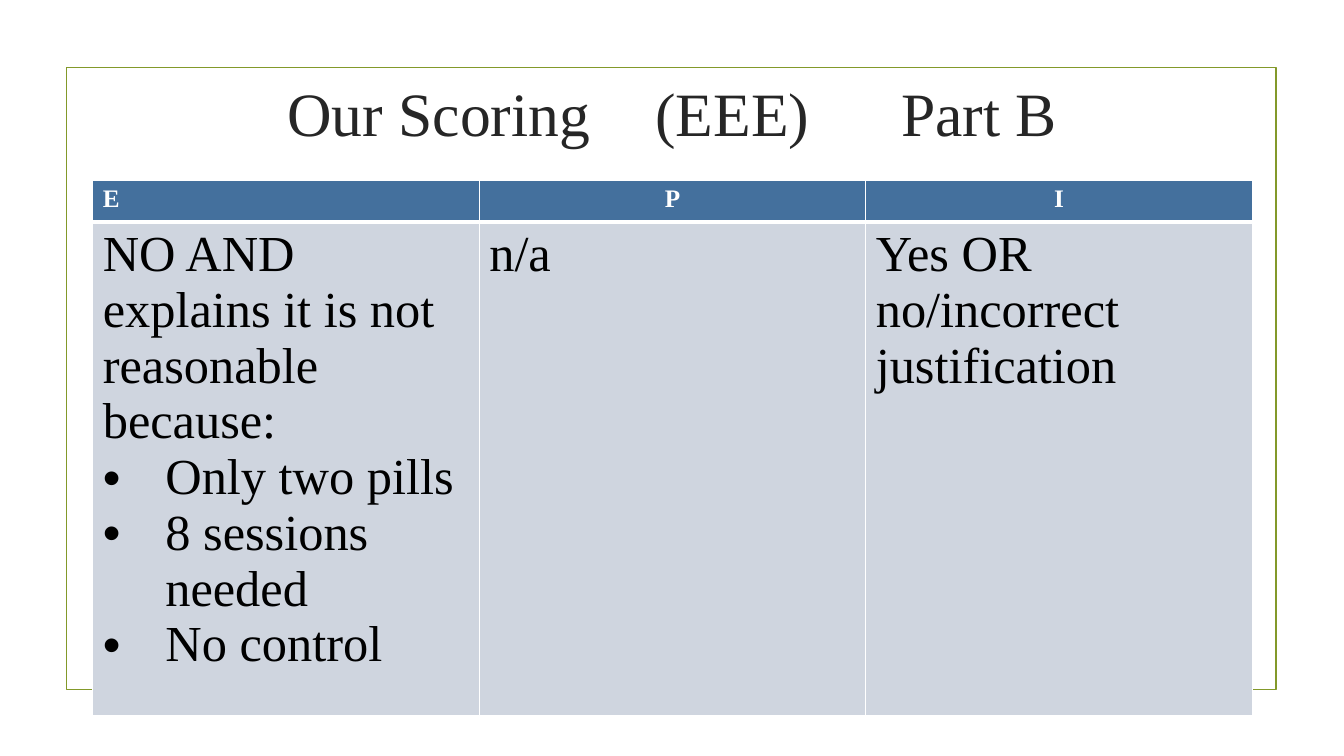
from dataclasses import dataclass

from lxml.etree import SubElement
from pptx import Presentation
from pptx.dml.color import RGBColor
from pptx.enum.shapes import MSO_SHAPE
from pptx.enum.text import MSO_ANCHOR, PP_ALIGN
from pptx.oxml.ns import qn
from pptx.util import Inches, Pt


@dataclass(frozen=True)
class Theme:
    """Colours, font and type sizes of the slide."""
    font: str = "Times New Roman"
    title: int = 44
    head: int = 18
    body: int = 36
    ink: str = "262626"
    black: str = "000000"
    white: str = "FFFFFF"
    olive: str = "83992A"
    blue: str = "44709D"
    pale: str = "CFD5DF"


THEME = Theme()
HEADS = ("E", "P", "I")
CELLS = (
    ("NO AND explains it is not reasonable because:",
     "•Only two pills", "•8 sessions needed", "•No control"),
    ("n/a",),
    ("Yes OR no/incorrect justification",),
)


def write(frame, lines, size, color, bold=False, align=PP_ALIGN.LEFT, tabs=()):
    """Fill a text frame; a line that starts with • becomes a bullet."""
    frame.word_wrap = True
    for i, line in enumerate(lines):
        para = frame.add_paragraph() if i else frame.paragraphs[0]
        para.alignment = align
        props = para._p.get_or_add_pPr()
        if line.startswith("•"):
            indent = Inches(0.62)
            props.set("marL", str(indent))
            props.set("indent", str(-indent))
            SubElement(props, qn("a:buFont"), typeface="Arial")
            SubElement(props, qn("a:buChar"), char="•")
        if tabs:
            stops = SubElement(props, qn("a:tabLst"))
            for stop in tabs:
                SubElement(stops, qn("a:tab"), pos=str(Inches(stop)), algn="l")
        run = para.add_run()
        run.text = line.lstrip("•")
        font = run.font
        font.name, font.size, font.bold = THEME.font, Pt(size), bold
        font.color.rgb = RGBColor.from_string(color)


def edge(cell, **widths):
    """Draw white cell borders, with widths in points by side."""
    props = cell._tc.get_or_add_tcPr()
    for side in "LRTB":
        line = SubElement(props, qn(f"a:ln{side}"), w=str(Pt(widths.get(side, 1))))
        fill = SubElement(line, qn("a:solidFill"))
        SubElement(fill, qn("a:srgbClr"), val=THEME.white)


def border(slide, box):
    """Draw the outline around the content."""
    shape = slide.shapes.add_shape(MSO_SHAPE.RECTANGLE, *map(Inches, box))
    shape.shadow.inherit = False
    shape.fill.background()
    shape.line.color.rgb = RGBColor.from_string(THEME.olive)
    shape.line.width = Pt(1.25)


def title(slide, box):
    """Place the title, its three parts set on tab stops."""
    frame = slide.shapes.add_textbox(*map(Inches, box)).text_frame
    frame.vertical_anchor = MSO_ANCHOR.MIDDLE
    frame.margin_left = Inches(1.43)
    write(frame, ["Our Scoring\t(EEE)\tPart B"], THEME.title, THEME.ink,
          tabs=(3.65, 6.09))


def scores(slide, box, least=0.41):
    """Place the scoring table, whose rows grow from a least height."""
    holder = slide.shapes.add_table(2, len(HEADS), *map(Inches, box))
    table = holder.table
    table.horz_banding = False
    for row in table.rows:
        row.height = Inches(least)
    holder.height = Inches(box[3])
    for col, (name, lines) in enumerate(zip(HEADS, CELLS)):
        top, low = table.cell(0, col), table.cell(1, col)
        edge(top, B=3)
        edge(low)
        for cell, color in ((top, THEME.blue), (low, THEME.pale)):
            cell.fill.solid()
            cell.fill.fore_color.rgb = RGBColor.from_string(color)
        write(top.text_frame, [name], THEME.head, THEME.white, bold=True,
              align=PP_ALIGN.CENTER if col else PP_ALIGN.LEFT)
        write(low.text_frame, lines, THEME.body, THEME.black)


def main():
    """Build and save the slide."""
    deck = Presentation()
    deck.slide_width, deck.slide_height = Inches(13.33), Inches(7.5)
    slide = deck.slides.add_slide(deck.slide_layouts[6])
    border(slide, (0.66, 0.67, 12, 6.17))
    title(slide, (1.42, 0.39, 10.5, 1.43))
    scores(slide, (0.92, 1.79, 11.5, 5.31))
    deck.save("out.pptx")


if __name__ == "__main__":
    main()
